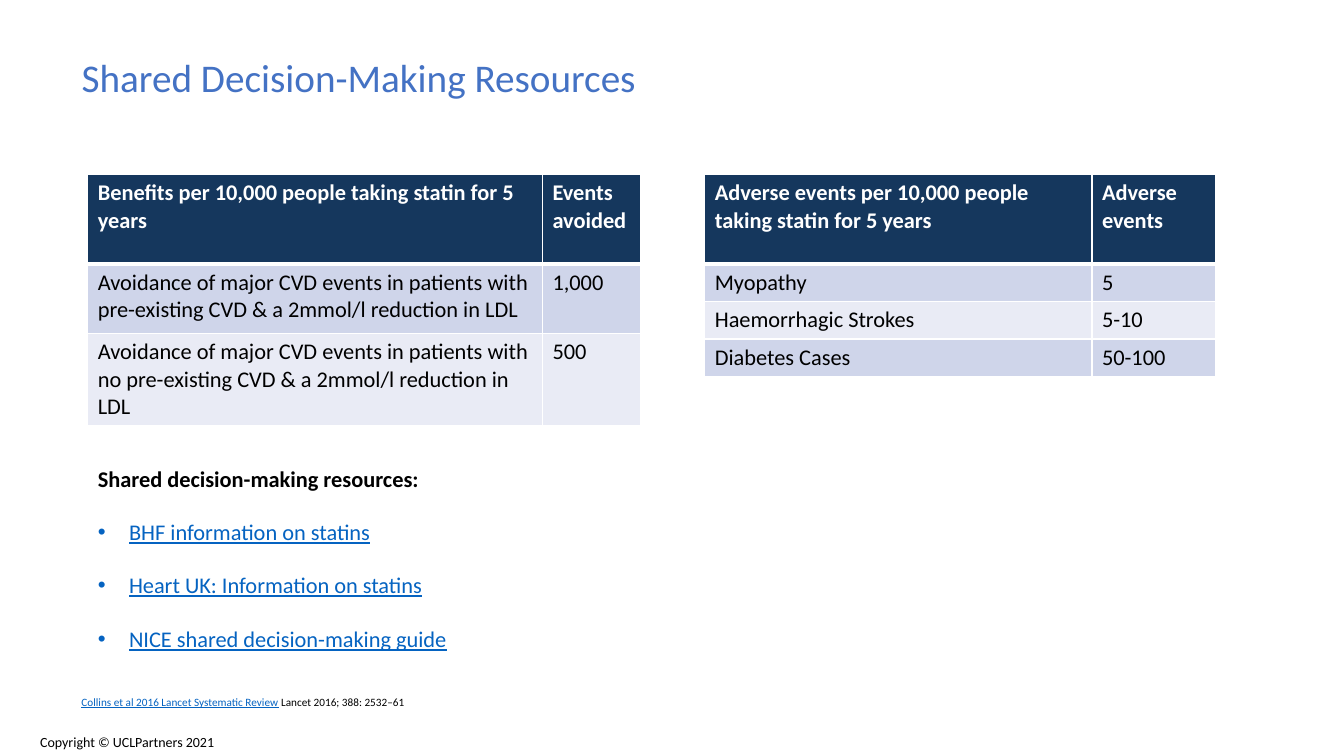
from dataclasses import dataclass

import pptx
import pptx.dml.color
import pptx.enum.text
import pptx.oxml
import pptx.oxml.ns
import pptx.util

EMU_PER_PX = 9144  # 100 px to the inch


@dataclass(frozen=True)
class Theme:
    font: str = "Calibri"
    title: str = "4472C4"
    link: str = "0563C1"
    text: str = "000000"
    white: str = "FFFFFF"
    header: str = "15375D"
    bands: tuple[str, str] = ("CFD5EA", "E9EBF5")
    title_pt: int = 28
    body_pt: int = 16
    copyright_pt: int = 10
    source_pt: int = 8
    list_gap_pt: int = 19
    border_pt: int = 1
    header_border_pt: int = 3


THEME = Theme()


@dataclass(frozen=True)
class Box:
    left: int
    top: int
    width: int
    height: int


@dataclass(frozen=True)
class StatinTable:
    left: int
    top: int
    columns: tuple[int, ...]
    heights: tuple[int, ...]
    rows: tuple[tuple[str, ...], ...]


TITLE_BOX = Box(71, 53, 929, 90)
LIST_BOX = Box(87, 456, 548, 199)
SOURCE_BOX = Box(71, 685, 1074, 24)
COPYRIGHT_BOX = Box(30, 723, 196, 27)
LIST_INDENT = 31

RESOURCES = (
    "BHF information on statins",
    "Heart UK: Information on statins",
    "NICE shared decision-making guide",
)

TABLES = (
    StatinTable(699, 173, (384, 123), (89, 37, 37, 37), (
        ("Adverse events per 10,000 people taking statin for 5 years", "Adverse events"),
        ("Myopathy", "5"),
        ("Haemorrhagic Strokes", "5-10"),
        ("Diabetes Cases", "50-100"),
    )),
    StatinTable(87, 173, (451, 97), (89, 69, 89), (
        ("Benefits per 10,000 people taking statin for 5 years", "Events avoided"),
        ("Avoidance of major CVD events in patients with pre-existing CVD"
         " & a 2mmol/l reduction in LDL", "1,000"),
        ("Avoidance of major CVD events in patients with no pre-existing CVD"
         " & a 2mmol/l reduction in LDL", "500"),
    )),
)


def px(value: int) -> pptx.util.Emu:
    return pptx.util.Emu(value * EMU_PER_PX)


def rgb(color: str) -> pptx.dml.color.RGBColor:
    return pptx.dml.color.RGBColor.from_string(color)


def style_runs(p, size: int, color: str, bold: bool = False, underline: bool = False) -> None:
    for r in p.runs:
        r.font.name = THEME.font
        r.font.size = pptx.util.Pt(size)
        r.font.color.rgb = rgb(color)
        r.font.bold = bold
        r.font.underline = underline


def place(sp, box: Box) -> None:
    sp.left, sp.top = px(box.left), px(box.top)
    sp.width, sp.height = px(box.width), px(box.height)


def set_bullet(p, bulleted: bool) -> None:
    indent = px(LIST_INDENT) if bulleted else 0
    pPr = p._p.get_or_add_pPr()
    pPr.set("marL", str(indent))
    pPr.set("indent", str(-indent))
    if bulleted:
        font = pptx.oxml.ns.qn("a:buFont")
        pPr.append(pPr.makeelement(font, {"typeface": "Arial"}))
        pPr.append(pPr.makeelement(pptx.oxml.ns.qn("a:buChar"), {"char": "•"}))
    else:
        pPr.append(pPr.makeelement(pptx.oxml.ns.qn("a:buNone"), {}))


def set_borders(cell, top: int, bottom: int) -> None:
    """Draw white cell borders; top and bottom are widths in points."""
    side = THEME.border_pt
    tcPr = cell._tc.get_or_add_tcPr()
    for tag, width in (("lnL", side), ("lnR", side), ("lnT", top), ("lnB", bottom)):
        tcPr.append(pptx.oxml.parse_xml(
            f'<a:{tag} {pptx.oxml.ns.nsdecls("a")} w="{pptx.util.Pt(width)}">'
            f'<a:solidFill><a:srgbClr val="{THEME.white}"/></a:solidFill></a:{tag}>'
        ))


def add_statin_table(slide, spec_table: StatinTable) -> None:
    t = spec_table
    table = slide.shapes.add_table(
        len(t.rows), len(t.columns), px(t.left), px(t.top),
        px(sum(t.columns)), px(sum(t.heights)),
    ).table
    table.horz_banding = False
    for column, width in zip(table.columns, t.columns):
        column.width = px(width)
    for i, (row, height, texts) in enumerate(zip(table.rows, t.heights, t.rows)):
        row.height = px(height)
        is_header = i == 0
        top = THEME.header_border_pt if i == 1 else THEME.border_pt
        bottom = THEME.header_border_pt if is_header else THEME.border_pt
        fill = THEME.header if is_header else THEME.bands[(i - 1) % 2]
        color = THEME.white if is_header else THEME.text
        for cell, text in zip(row.cells, texts):
            set_borders(cell, top, bottom)
            cell.fill.solid()
            cell.fill.fore_color.rgb = rgb(fill)
            cell.text_frame.text = text
            style_runs(cell.text_frame.paragraphs[0], THEME.body_pt, color, bold=is_header)


def add_title(slide) -> None:
    sp = slide.shapes.title
    place(sp, TITLE_BOX)
    tf = sp.text_frame
    tf.text = "Shared Decision-Making Resources"
    tf.vertical_anchor = pptx.enum.text.MSO_ANCHOR.TOP
    p = tf.paragraphs[0]
    p.alignment = pptx.enum.text.PP_ALIGN.LEFT
    p.line_spacing = 0.9
    style_runs(p, THEME.title_pt, THEME.title)


def add_resource_list(slide) -> None:
    sp = slide.placeholders[1]
    place(sp, LIST_BOX)
    tf = sp.text_frame
    tf.auto_size = pptx.enum.text.MSO_AUTO_SIZE.NONE
    heading = tf.paragraphs[0]
    heading.text = "Shared decision-making resources:"
    set_bullet(heading, False)
    heading.space_before = pptx.util.Pt(0)
    style_runs(heading, THEME.body_pt, THEME.text, bold=True)
    for resource in RESOURCES:
        p = tf.add_paragraph()
        p.text = resource
        set_bullet(p, True)
        p.space_before = pptx.util.Pt(THEME.list_gap_pt)
        style_runs(p, THEME.body_pt, THEME.link, underline=True)


def add_line(slide, box: Box, text: str, size: int, wrap: bool):
    """Add a one-paragraph text box and return its paragraph."""
    sp = slide.shapes.add_textbox(px(box.left), px(box.top), px(box.width), px(box.height))
    tf = sp.text_frame
    tf.word_wrap = wrap
    tf.text = text
    p = tf.paragraphs[0]
    style_runs(p, size, THEME.text)
    return p


def main() -> None:
    prs = pptx.Presentation()
    prs.slide_width, prs.slide_height = px(1333), px(750)
    slide = prs.slides.add_slide(prs.slide_layouts[1])
    add_title(slide)
    add_resource_list(slide)
    for table in TABLES:
        add_statin_table(slide, table)
    source = add_line(slide, SOURCE_BOX, "Collins et al 2016 Lancet Systematic Review",
                      THEME.source_pt, wrap=True)
    style_runs(source, THEME.source_pt, THEME.link, underline=True)
    r = source.add_run()
    r.text = " Lancet 2016; 388: 2532–61"
    r.font.name = THEME.font
    r.font.size = pptx.util.Pt(THEME.source_pt)
    r.font.color.rgb = rgb(THEME.text)
    add_line(slide, COPYRIGHT_BOX, "Copyright © UCLPartners 2021",
             THEME.copyright_pt, wrap=False)
    prs.save("out.pptx")


if __name__ == "__main__":
    main()
